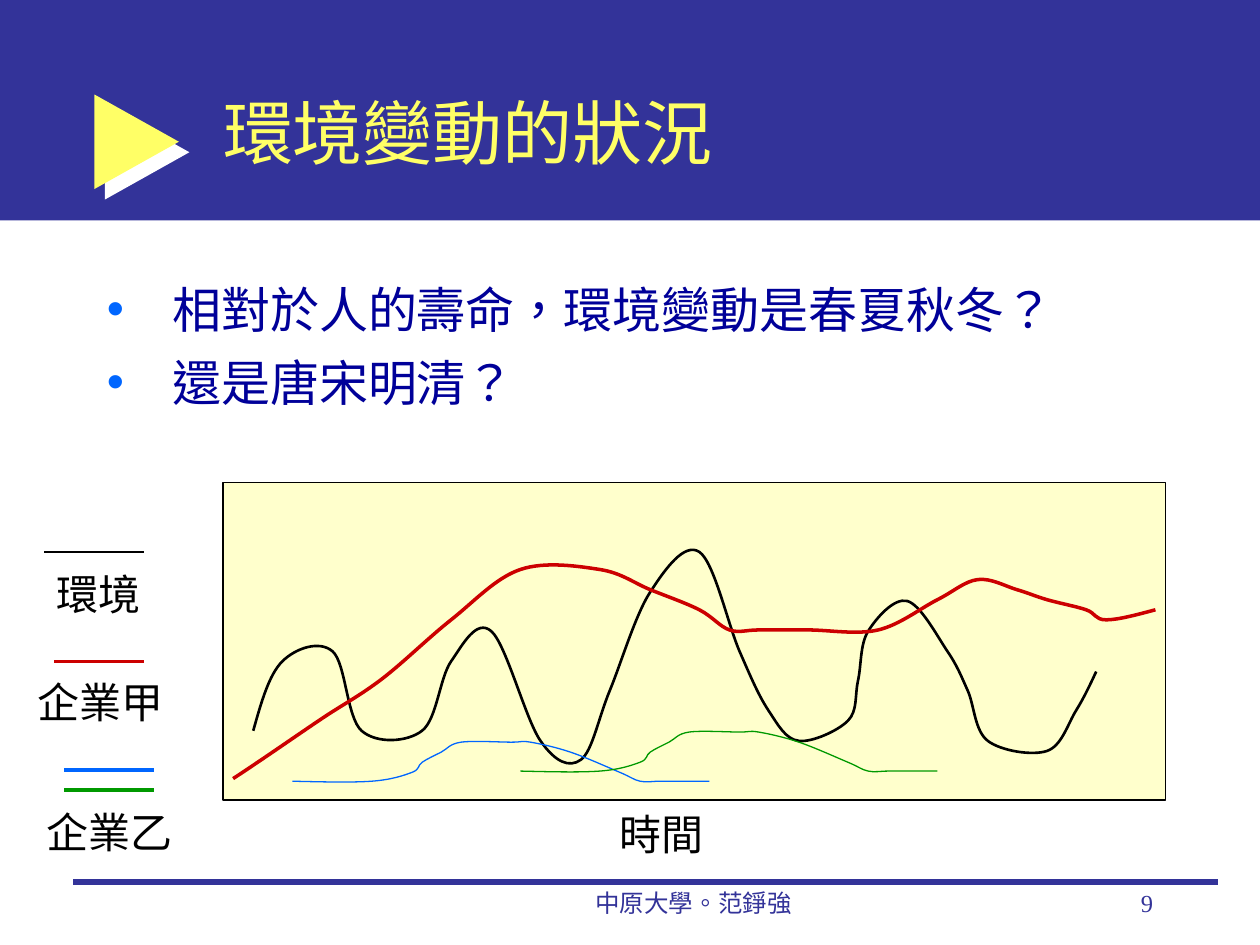
from lxml.etree import SubElement
from pptx import Presentation
from pptx.dml.color import RGBColor
from pptx.enum.shapes import MSO_CONNECTOR, MSO_SHAPE
from pptx.enum.text import MSO_ANCHOR, MSO_AUTO_SIZE, PP_ALIGN
from pptx.oxml.ns import qn
from pptx.util import Pt

PX = 9144  # EMU per px, 100 px to the inch
COLORS = {
    "banner": "333399", "yellow": "FFFF66", "white": "FFFFFF", "body": "000099",
    "panel": "FFFFCC", "black": "000000", "red": "CC0000", "blue": "0066FF",
    "green": "009900",
}
RGB = {name: RGBColor.from_string(value) for name, value in COLORS.items()}


def add_text(paragraph, text, size, font, color):
    run = paragraph.add_run()
    run.text = text
    run.font.size = Pt(size)
    run.font.name = font
    run.font.color.rgb = RGB[color]
    run._r.get_or_add_rPr().set("lang", "zh-TW")


def smooth(curve):
    """Turn the straight segments of a freeform into Bezier curves with Catmull-Rom tangents."""
    points = [(int(point.get("x")), int(point.get("y"))) for point in curve.element.iter(qn("a:pt"))]
    segments = list(curve.element.iter(qn("a:lnTo")))
    last = len(segments) - 1
    for i, segment in enumerate(segments):
        start, end = points[i], points[i + 1]
        before, after = points[max(i - 1, 0)], points[min(i + 2, last + 1)]
        control_1 = [s + (e - b) / 6 for s, e, b in zip(start, end, before)]
        control_2 = [e - (a - s) / 6 for s, e, a in zip(start, end, after)]
        if i == 0:
            control_1 = [(s + c) / 2 for s, c in zip(start, control_2)]
        if i == last:
            control_2 = [(e + c) / 2 for e, c in zip(end, control_1)]
        bezier = SubElement(segment.getparent(), qn("a:cubicBezTo"))
        for x, y in (control_1, control_2, end):
            SubElement(bezier, qn("a:pt"), x=str(round(x)), y=str(round(y)))
        segment.getparent().replace(segment, bezier)


presentation = Presentation()
presentation.slide_width = 1000 * PX
presentation.slide_height = 750 * PX
slide = presentation.slides.add_slide(presentation.slide_layouts[5])
shapes = slide.shapes

# Banner and its triangle
banner = shapes.add_shape(MSO_SHAPE.RECTANGLE, 0, 0, 1000 * PX, 175 * PX)
triangle = shapes.add_shape(MSO_SHAPE.RIGHT_ARROW, 75 * PX, 75 * PX, 67 * PX, 75 * PX)
triangle.adjustments[0] = 0.384
triangle.adjustments[1] = 1
for shape, color in ((banner, "banner"), (triangle, "yellow")):
    shape.shadow.inherit = False
    shape.fill.solid()
    shape.fill.fore_color.rgb = RGB[color]
    shape.line.fill.background()
effects = triangle.element.spPr.find(qn("a:effectLst"))
shadow = SubElement(effects, qn("a:outerShdw"), blurRad="0", dist=str(Pt(8.5)),
                    dir="2700000", algn="ctr", rotWithShape="0")
SubElement(shadow, qn("a:srgbClr"), val=COLORS["white"])

# Title, brought in front of the banner
title = shapes.title
title.element.getparent().append(title.element)
title.left, title.top, title.width, title.height = 167 * PX, 42 * PX, 758 * PX, 125 * PX
title.text_frame.word_wrap = True
title.text_frame.vertical_anchor = MSO_ANCHOR.MIDDLE
paragraph = title.text_frame.paragraphs[0]
paragraph.alignment = PP_ALIGN.LEFT
add_text(paragraph, "環境變動的狀況", 40, "Arial", "yellow")

# Bullets
body = shapes.add_textbox(75 * PX, 217 * PX, 866 * PX, 143 * PX).text_frame
body.word_wrap = True
for i, text in enumerate(("相對於人的壽命，環境變動是春夏秋冬？", "還是唐宋明清？")):
    paragraph = body.add_paragraph() if i else body.paragraphs[0]
    properties = paragraph._p.get_or_add_pPr()
    properties.set("marL", str(52 * PX))
    properties.set("indent", str(-52 * PX))
    bullet_color = SubElement(properties, qn("a:buClr"))
    SubElement(bullet_color, qn("a:srgbClr"), val=COLORS["blue"])
    SubElement(properties, qn("a:buFont"), typeface="Arial")
    SubElement(properties, qn("a:buChar"), char="•")
    if i:
        paragraph.space_before = Pt(8)
    add_text(paragraph, text, 28, "Arial", "body")

# Diagram panel
panel = shapes.add_shape(MSO_SHAPE.RECTANGLE, 177 * PX, 383 * PX, 748 * PX, 252 * PX)
panel.shadow.inherit = False
panel.fill.solid()
panel.fill.fore_color.rgb = RGB["panel"]
panel.line.color.rgb = RGB["black"]
panel.line.width = Pt(0.75)

# Curves over time; the green one repeats the blue one later and higher
environment = [
    (201, 580), (224, 525), (264, 517), (287, 580), (335, 580), (358, 525), (390, 501),
    (429, 588), (461, 603), (484, 548), (516, 470), (555, 438), (587, 517), (610, 564),
    (634, 588), (673, 572), (681, 540), (689, 501), (720, 477), (752, 517), (768, 548),
    (784, 588), (831, 596), (854, 564), (870, 533)]
company_a = [
    (185, 618), (209, 602), (256, 570), (303, 539), (358, 492), (413, 452), (476, 452),
    (516, 468), (555, 484), (579, 500), (602, 500), (642, 500), (697, 500), (744, 476),
    (776, 460), (807, 468), (831, 476), (862, 484), (878, 492), (917, 484)]
company_b = [
    (232, 620), (295, 620), (327, 613), (335, 605), (350, 597), (366, 589), (406, 589),
    (421, 589), (453, 597), (492, 613), (508, 620), (524, 620), (547, 620), (563, 620)]
company_b_later = [(x + 181, y - 8) for x, y in company_b]
for anchors, color, width in (
        (environment, "black", 1.5), (company_a, "red", 2),
        (company_b, "blue", 0.75), (company_b_later, "green", 0.75)):
    points = [(x * PX, y * PX) for x, y in anchors]
    builder = shapes.build_freeform(*points[0], scale=1.0)
    builder.add_line_segments(points[1:], close=False)
    curve = builder.convert_to_shape()
    smooth(curve)
    curve.shadow.inherit = False
    curve.fill.background()
    curve.line.color.rgb = RGB[color]
    curve.line.width = Pt(width)

# Legend strokes and footer rule
for left, right, y, color, width in (
        (35, 114, 438, "black", 1.5), (43, 114, 525, "red", 2),
        (51, 122, 611, "blue", 2), (51, 122, 627, "green", 2),
        (58, 967, 700, "banner", 3)):
    line = shapes.add_connector(MSO_CONNECTOR.STRAIGHT, left * PX, y * PX, right * PX, y * PX)
    line.line.color.rgb = RGB[color]
    line.line.width = Pt(width)
    SubElement(line.element.spPr, qn("a:effectLst"))

# Legend and axis labels
for text, left, top, width in (
        ("時間", 482, 637, 87), ("環境", 35, 446, 87),
        ("企業甲", 20, 532, 120), ("企業乙", 27, 635, 120)):
    label = shapes.add_textbox(left * PX, top * PX, width * PX, 50 * PX).text_frame
    label.word_wrap = False
    label.auto_size = MSO_AUTO_SIZE.SHAPE_TO_FIT_TEXT
    add_text(label.paragraphs[0], text, 24, "Times New Roman", "black")

# Footer
for text, left, width, alignment in (
        ("中原大學。范錚強", 392, 317, PP_ALIGN.CENTER), ("9", 717, 208, PP_ALIGN.RIGHT)):
    footer = shapes.add_textbox(left * PX, 700 * PX, width * PX, 50 * PX).text_frame
    footer.word_wrap = True
    footer.paragraphs[0].alignment = alignment
    add_text(footer.paragraphs[0], text, 14, "Times New Roman", "banner")

presentation.save("out.pptx")
